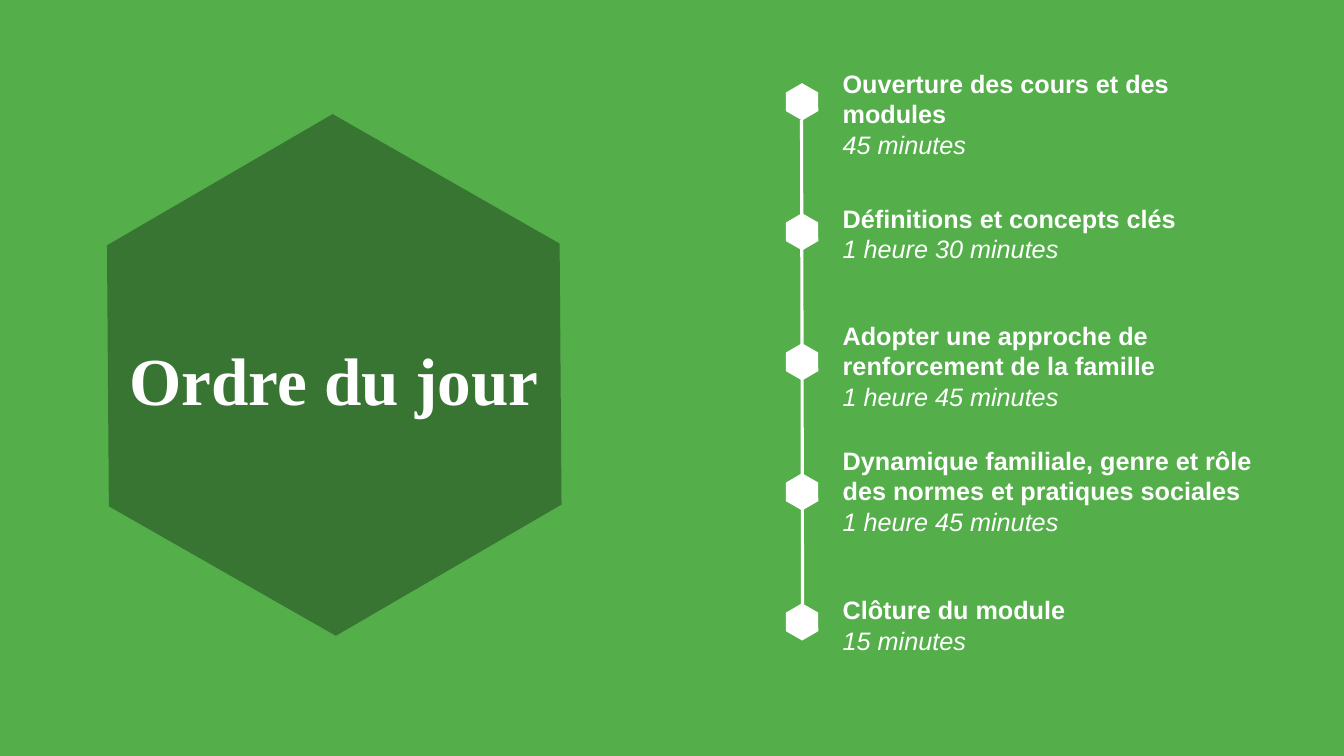
from dataclasses import dataclass

from lxml import etree
from pptx import Presentation
from pptx.dml.color import RGBColor
from pptx.enum.shapes import MSO_CONNECTOR, MSO_SHAPE
from pptx.enum.text import MSO_ANCHOR, PP_ALIGN
from pptx.oxml.ns import qn
from pptx.util import Inches, Pt

HEXAGON = MSO_SHAPE.HEXAGON
STRAIGHT = MSO_CONNECTOR.STRAIGHT
TOP, MIDDLE = MSO_ANCHOR.TOP, MSO_ANCHOR.MIDDLE
LEFT, CENTER = PP_ALIGN.LEFT, PP_ALIGN.CENTER


@dataclass(frozen=True)
class Theme:
    background: RGBColor = RGBColor.from_string("54AF4B")
    panel: RGBColor = RGBColor.from_string("387532")
    light: RGBColor = RGBColor.from_string("FFFFFF")
    title_font: str = "Times New Roman"
    body_font: str = "Arial"
    title_size: float = 48
    body_size: float = 18
    line_width: float = 2.25


THEME = Theme()

# Heading, duration, text top and text height in inches
AGENDA = [
    ("Ouverture des cours et des modules", "45 minutes", 0.63, 1.01),
    ("Définitions et concepts clés", "1 heure 30 minutes", 1.97, 0.71),
    ("Adopter une approche de renforcement de la famille",
     "1 heure 45 minutes", 3.13, 1.01),
    ("Dynamique familiale, genre et rôle des normes et pratiques sociales",
     "1 heure 45 minutes", 4.37, 1.01),
    ("Clôture du module", "15 minutes", 5.85, 0.71),
]


def add_hexagon(s, x, y, w, h, color):
    sp = s.shapes.add_shape(HEXAGON, Inches(x), Inches(y), Inches(w), Inches(h))
    sp.adjustments[0] = 0.29
    sp.rotation = 29.7
    sp.shadow.inherit = False
    sp.fill.solid()
    sp.fill.fore_color.rgb = color
    sp.line.fill.background()


def add_text(s, x, y, w, h, lines, font=THEME.body_font, size=THEME.body_size,
             align=LEFT, anchor=TOP, spacing=1.0):
    """Each line is a (text, bold, italic) tuple."""
    tf = s.shapes.add_textbox(Inches(x), Inches(y), Inches(w), Inches(h)).text_frame
    tf.word_wrap = True
    tf.vertical_anchor = anchor
    for i, (text, bold, italic) in enumerate(lines):
        p = tf.add_paragraph() if i else tf.paragraphs[0]
        p.alignment = align
        p.line_spacing = spacing
        r = p.add_run()
        r.text = text
        r.font.name = font
        r.font.size = Pt(size)
        r.font.bold = bold
        r.font.italic = italic
        r.font.color.rgb = THEME.light


def add_title_panel(s, x, y, w, h):
    add_hexagon(s, x, y, w, h, THEME.panel)
    add_text(s, x + 0.4, y + 2.02, 4.39, 0.61, [("Ordre du jour", True, False)],
             font=THEME.title_font, size=THEME.title_size,
             align=CENTER, anchor=MIDDLE, spacing=0.9)


def add_timeline(s, x, y, pitch):
    marker_w, marker_h = 0.37, 0.32
    # Rail behind the markers
    rail = s.shapes.add_connector(STRAIGHT, Inches(x + 0.18), Inches(y + 0.34),
                                  Inches(x + 0.19), Inches(y + 4 * pitch - 0.02))
    rail.line.color.rgb = THEME.light
    rail.line.width = Pt(THEME.line_width)
    etree.SubElement(rail._element.spPr, qn("a:effectLst"))
    # Markers with their agenda items
    for i, (heading, duration, top, height) in enumerate(AGENDA):
        add_hexagon(s, x, y + i * pitch, marker_w, marker_h, THEME.light)
        add_text(s, x + 0.49, top, 4.37, height,
                 [(heading, True, False), (duration, False, True)])


def main():
    prs = Presentation()
    prs.slide_width, prs.slide_height = Inches(13.33), Inches(7.5)
    s = prs.slides.add_slide(prs.slide_layouts[6])
    s.background.fill.solid()
    s.background.fill.fore_color.rgb = THEME.background
    add_title_panel(s, 0.72, 1.48, 5.19, 4.48)
    add_timeline(s, 7.77, 0.85, 1.29)
    prs.save("out.pptx")


if __name__ == "__main__":
    main()
